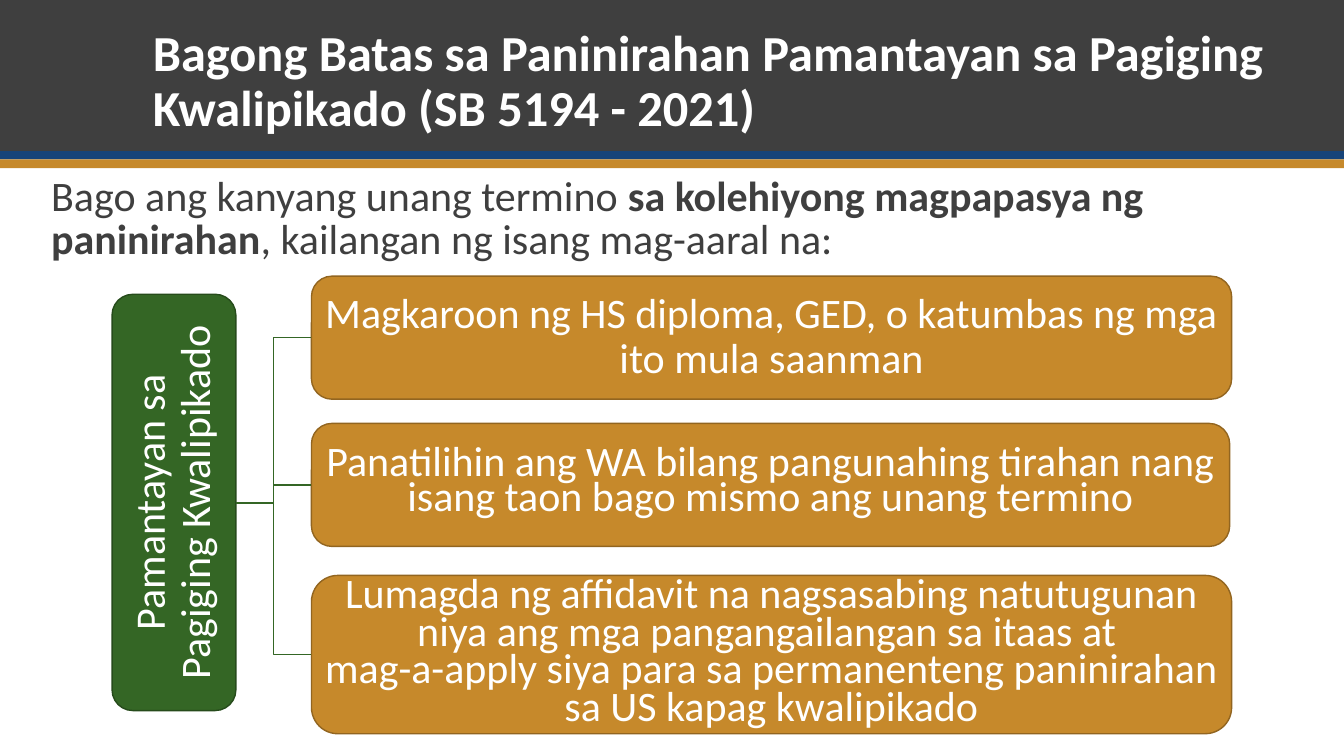
from lxml import etree
from pptx import Presentation
from pptx.dml.color import RGBColor
from pptx.enum.shapes import MSO_CONNECTOR, MSO_SHAPE
from pptx.enum.text import MSO_ANCHOR, MSO_AUTO_SIZE, PP_ALIGN
from pptx.oxml.ns import qn
from pptx.util import Cm, Pt

RECTANGLE, ROUNDED = MSO_SHAPE.RECTANGLE, MSO_SHAPE.ROUNDED_RECTANGLE
ELBOW = MSO_CONNECTOR.ELBOW
MIDDLE, BOTTOM = MSO_ANCHOR.MIDDLE, MSO_ANCHOR.BOTTOM
LEFT, CENTER = PP_ALIGN.LEFT, PP_ALIGN.CENTER
COLORS = {
    "gray": "3F3F3F", "blue": "174479", "gold": "C6892B", "gold edge": "926520",
    "green": "346625", "green edge": "264B1B", "white": "FFFFFF",
}


def color(name):
    return RGBColor.from_string(COLORS[name])


def add_card(page, left, top, width, height, fill, text, spacing):
    card = page.shapes.add_shape(ROUNDED, Cm(left), Cm(top), Cm(width), Cm(height))
    card.shadow.inherit = False
    card.fill.solid()
    card.fill.fore_color.rgb = color(fill)
    card.line.color.rgb = color(fill + " edge")
    card.line.width = Pt(1)
    frame = card.text_frame
    frame.text = text
    frame.word_wrap = True
    frame.vertical_anchor = MIDDLE
    frame.margin_left = frame.margin_right = Cm(0.1)
    frame.margin_top = frame.margin_bottom = Cm(0.1)
    para = frame.paragraphs[0]
    para.alignment = CENTER
    para.line_spacing = spacing
    for span in para.runs:
        span.font.name = "Calibri"
        span.font.size = Pt(30)
        span.font.color.rgb = color("white")
    return card


deck = Presentation()
deck.slide_width, deck.slide_height = Cm(33.87), Cm(19.05)
page = deck.slides.add_slide(deck.slide_layouts[5])

# Header bands
for top, height, fill in ((0, 3.81, "gray"), (3.81, 0.21, "blue"), (4.02, 0.22, "gold")):
    band = page.shapes.add_shape(RECTANGLE, 0, Cm(top), deck.slide_width, Cm(height))
    band.shadow.inherit = False
    band.fill.solid()
    band.fill.fore_color.rgb = color(fill)
    band.line.fill.background()

# Title, brought in front of the bands
title = page.shapes.title
page.shapes._spTree.append(title._element)
title.left, title.top, title.width, title.height = Cm(3.6), Cm(0.7), Cm(30.27), Cm(2.88)
frame = title.text_frame
frame.text = "Bagong Batas sa Paninirahan Pamantayan sa Pagiging Kwalipikado (SB 5194 - 2021)"
frame.auto_size = MSO_AUTO_SIZE.NONE
frame.word_wrap = True
frame.vertical_anchor = BOTTOM
para = frame.paragraphs[0]
para.alignment = LEFT
para.line_spacing = 0.9
font = para.runs[0].font
font.name, font.size, font.bold = "Calibri", Pt(36), True
font.color.rgb = color("white")

# Introduction
box = page.shapes.add_textbox(Cm(1.04), Cm(4.32), Cm(32.83), Cm(2.46))
box.text_frame.word_wrap = True
para = box.text_frame.paragraphs[0]
para.line_spacing = Pt(31)
for text, bold in (
    ("Bago ang kanyang unang termino ", False),
    ("sa kolehiyong magpapasya ng paninirahan", True),
    (", kailangan ng isang mag-aaral na:", False),
):
    span = para.add_run()
    span.text = text
    span.font.name, span.font.size, span.font.bold = "Calibri", Pt(30), bold
    span.font.color.rgb = color("gray")

# Root of the tree, turned to read upwards
root = add_card(page, -0.86, 11.1, 10.49, 3.12, "green",
                "Pamantayan sa Pagiging Kwalipikado", 0.9)
root.rotation = 270
root_right, root_middle = 5.95, 12.67

# Criteria with their branches
criteria = (
    (6.96, 23.19, 3.1, 0.9,
     "Magkaroon ng HS diploma, GED, o katumbas ng mga ito mula saanman"),
    (10.67, 23.14, 3.1, Pt(25),
     "Panatilihin ang WA bilang pangunahing tirahan nang isang taon bago mismo "
     "ang unang termino"),
    (14.5, 23.19, 3.99, Pt(27),
     "Lumagda ng affidavit na nagsasabing natutugunan niya ang mga pangangailangan "
     "sa itaas at \vmag-a-apply siya para sa permanenteng paninirahan sa US kapag "
     "kwalipikado"),
)
card_left = 7.85
for top, width, height, spacing, text in criteria:
    add_card(page, card_left, top, width, height, "gold", text, spacing)
    branch = page.shapes.add_connector(
        ELBOW, Cm(root_right), Cm(root_middle), Cm(card_left), Cm(top + height / 2))
    branch.line.color.rgb = color("green")
    branch.line.width = Pt(1)
    etree.SubElement(branch._element.spPr, qn("a:effectLst"))

deck.save("out.pptx")
